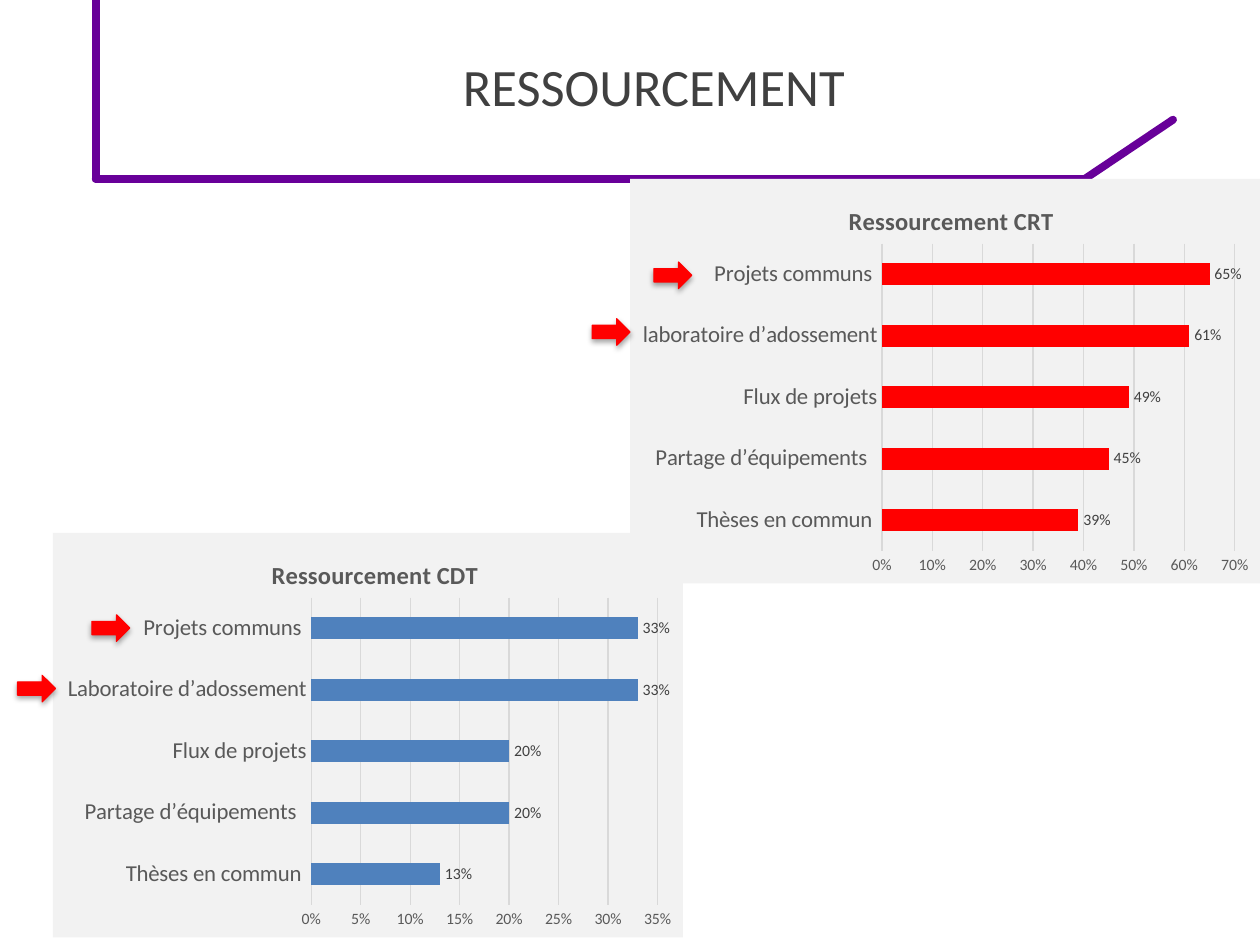
from itertools import pairwise

from lxml.etree import SubElement
from pptx import Presentation
from pptx.chart.data import CategoryChartData
from pptx.dml.color import RGBColor
from pptx.enum.chart import XL_CHART_TYPE, XL_LABEL_POSITION, XL_TICK_MARK
from pptx.enum.shapes import MSO_CONNECTOR, MSO_SHAPE
from pptx.enum.text import MSO_ANCHOR, PP_ALIGN
from pptx.oxml import parse_xml
from pptx.oxml.ns import nsdecls, qn
from pptx.util import Inches, Pt

PURPLE = RGBColor(0x68, 0x00, 0x99)
RED = RGBColor(0xFF, 0x00, 0x00)
BLUE = RGBColor(0x4F, 0x81, 0xBD)
DARK = RGBColor(0x40, 0x40, 0x40)
GRAY = RGBColor(0x59, 0x59, 0x59)
RULE = RGBColor(0xD9, 0xD9, 0xD9)
PALE = RGBColor(0xF2, 0xF2, 0xF2)
BLACK = RGBColor(0x00, 0x00, 0x00)

FRAME = [(0.76, 0), (0.76, 1.42), (8.61, 1.42), (9.31, 0.95)]


def style(font, size, color, bold=False):
    font.name = "Calibri"
    font.size = Pt(size)
    font.color.rgb = color
    font.bold = bold


def write(frame, text, size=14, color=GRAY, bold=False, align=PP_ALIGN.CENTER):
    para = frame.paragraphs[0]
    para.alignment = align
    run = para.add_run()
    run.text = text
    style(run.font, size, color, bold)


def layout(**parts):
    body = "".join(f'<c:{key} val="{val}"/>' for key, val in parts.items())
    return parse_xml(
        f'<c:layout {nsdecls("c")}><c:manualLayout>{body}</c:manualLayout></c:layout>'
    )


class Deck:
    def __init__(self, wide, high):
        self.file = Presentation()
        self.file.slide_width = Inches(wide)
        self.file.slide_height = Inches(high)
        self.slide = self.file.slides.add_slide(self.file.slide_layouts[6])
        self.shapes = self.slide.shapes

    def line(self, start, end):
        ends = [Inches(v) for v in (*start, *end)]
        link = self.shapes.add_connector(MSO_CONNECTOR.STRAIGHT, *ends)
        link.line.color.rgb = PURPLE
        link.line.width = Pt(4.5)
        props = link._element.spPr
        props.find(qn("a:ln")).set("cap", "rnd")
        SubElement(props, qn("a:effectLst"))

    def title(self, text, *place):
        box = self.shapes.add_textbox(*[Inches(v) for v in place])
        box.text_frame.word_wrap = True
        box.text_frame.vertical_anchor = MSO_ANCHOR.MIDDLE
        write(box.text_frame, text, size=30, color=DARK)

    def arrow(self, left, top):
        place = [Inches(v) for v in (left, top, 0.3, 0.21)]
        shape = self.shapes.add_shape(MSO_SHAPE.RIGHT_ARROW, *place)
        shape.shadow.inherit = False
        shape.fill.solid()
        shape.fill.fore_color.rgb = RED
        shape.line.color.rgb = RED
        shape.line.width = Pt(0.75)
        shade = SubElement(
            shape._element.spPr.find(qn("a:effectLst")), qn("a:outerShdw"),
            blurRad=str(Pt(3.1)), dist=str(Pt(1.8)), dir="5400000", rotWithShape="0",
        )
        tint = SubElement(shade, qn("a:srgbClr"), val=str(BLACK))
        SubElement(tint, qn("a:alpha"), val="35000")

    def chart(self, left, top, title, rows, color, peak, step, plot):
        data = CategoryChartData(number_format="0%")
        data.categories = [name for name, _ in rows]
        data.add_series("Series 1", [val for _, val in rows])
        place = [Inches(v) for v in (left, top, 5, 3.21)]
        chart = self.shapes.add_chart(XL_CHART_TYPE.BAR_CLUSTERED, *place, data).chart
        style(chart.font, 10, BLACK)
        chart.has_legend = False
        chart.has_title = True
        write(chart.chart_title.text_frame, title, bold=True)
        chart.chart_title.include_in_layout = False
        head = chart.chart_title._element
        for old in head.findall(qn("c:layout")):
            head.remove(old)
        head.find(qn("c:tx")).addnext(layout(xMode="edge", yMode="edge", x=0.34, y=0.05))
        self.paint(chart)
        self.axes(chart, peak, step)
        self.bars(chart.plots[0], color)
        area = chart._chartSpace.chart.plotArea
        for old in area.findall(qn("c:layout")):
            area.remove(old)
        x, w = plot
        area.insert(0, layout(layoutTarget="inner", xMode="edge", yMode="edge",
                              x=x, y=0.16, w=w, h=0.76))

    def paint(self, chart):
        fill = parse_xml(
            f'<c:spPr {nsdecls("c", "a")}><a:solidFill><a:srgbClr val="{PALE}"/>'
            "</a:solidFill><a:ln><a:noFill/></a:ln></c:spPr>"
        )
        chart._chartSpace.find(qn("c:txPr")).addprevious(fill)

    def axes(self, chart, peak, step):
        cats, vals = chart.category_axis, chart.value_axis
        for axis, size in ((cats, 13), (vals, 9)):
            axis.major_tick_mark = XL_TICK_MARK.NONE
            axis.minor_tick_mark = XL_TICK_MARK.NONE
            style(axis.tick_labels.font, size, GRAY)
        vals.minimum_scale, vals.maximum_scale = 0, peak
        vals.major_unit = step
        vals.tick_labels.number_format = "0%"
        vals.tick_labels.number_format_is_linked = False
        vals.has_major_gridlines = True
        vals.format.line.fill.background()
        for line in (cats.format.line, vals.major_gridlines.format.line):
            line.color.rgb = RULE
            line.width = Pt(0.75)

    def bars(self, plot, color):
        plot.gap_width = 182
        plot.vary_by_categories = False
        fill = plot.series[0].format.fill
        fill.solid()
        fill.fore_color.rgb = color
        labels = plot.series[0].data_labels
        labels.show_value = True
        labels.number_format = "0%"
        labels.number_format_is_linked = False
        labels.position = XL_LABEL_POSITION.OUTSIDE_END
        style(labels.font, 9, DARK)

    def save(self):
        self.file.save("out.pptx")


def main():
    deck = Deck(10, 7.5)
    for start, end in pairwise(FRAME):
        deck.line(start, end)
    deck.title("RESSOURCEMENT", 0.88, 0.16, 8.62, 1.04)

    def rows(lab, vals):
        names = ["Thèses en commun ", "Partage d’équipements  ", "Flux de projets",
                 lab, "Projets communs "]
        return list(zip(names, vals))

    deck.chart(5, 1.42, "Ressourcement CRT",
               rows("laboratoire d’adossement", [0.39, 0.45, 0.49, 0.61, 0.65]),
               RED, 0.7, 0.1, (0.4, 0.56))
    deck.chart(0.42, 4.23, "Ressourcement CDT",
               rows("Laboratoire d’adossement", [0.13, 0.2, 0.2, 0.33, 0.33]),
               BLUE, 0.35, 0.05, (0.41, 0.55))
    for left, top in [(5.19, 2.08), (4.7, 2.53), (0.14, 5.36), (0.73, 4.88)]:
        deck.arrow(left, top)
    deck.save()


if __name__ == "__main__":
    main()
